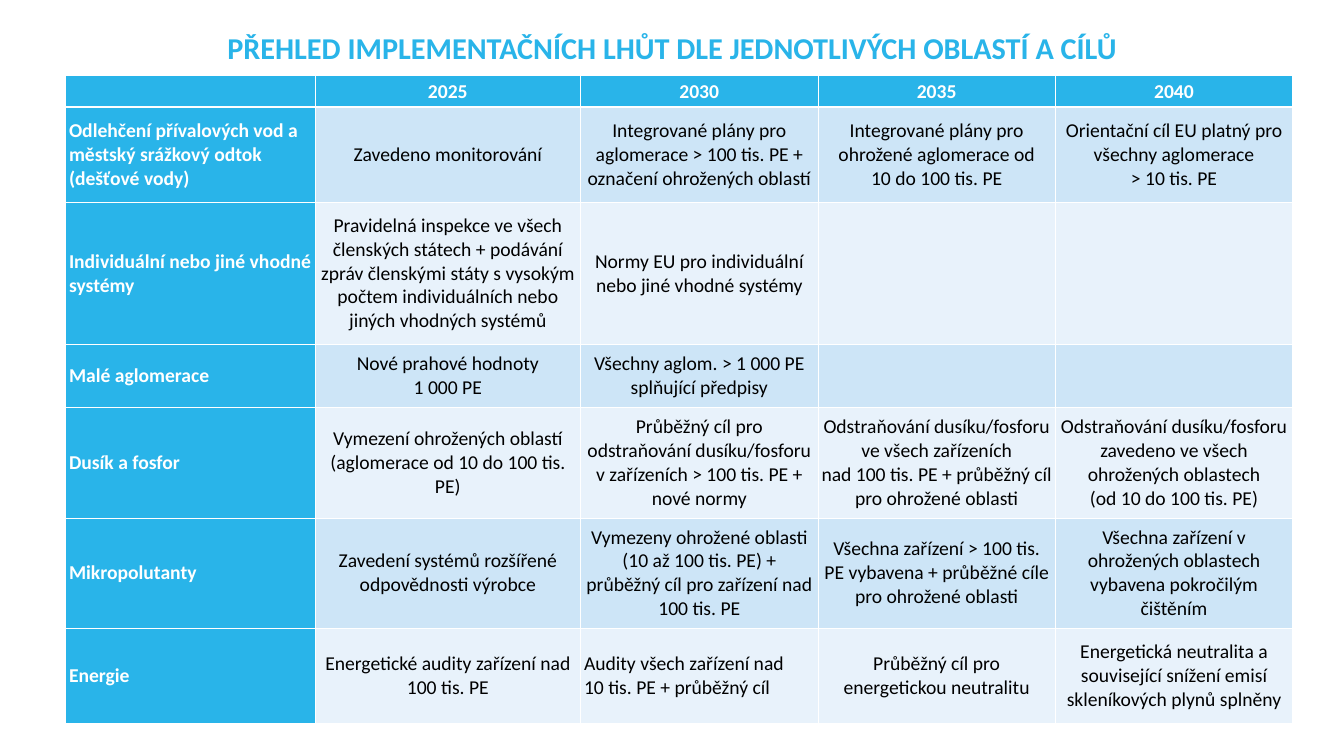
from dataclasses import dataclass

from lxml import etree
from pptx import Presentation
from pptx.dml.color import RGBColor
from pptx.enum.text import MSO_ANCHOR, PP_ALIGN
from pptx.oxml.ns import qn
from pptx.util import Pt

LEFT, CENTER = PP_ALIGN.LEFT, PP_ALIGN.CENTER
TOP, MIDDLE = MSO_ANCHOR.TOP, MSO_ANCHOR.MIDDLE


@dataclass(frozen=True)
class Theme:
    """Colours and type sizes of the slide."""
    font: str = "Calibri"
    accent: str = "29B4E9"
    white: str = "FFFFFF"
    black: str = "000000"
    bands: tuple = ("CDE5F7", "E8F2FB")
    title_size: float = 43.2
    table_size: float = 28


THEME = Theme()

TITLE = "PŘEHLED IMPLEMENTAČNÍCH LHŮT DLE JEDNOTLIVÝCH OBLASTÍ A CÍLŮ"
DEADLINES = [
    ["", "2025", "2030", "2035", "2040"],
    ["Odlehčení přívalových vod a městský srážkový odtok (dešťové vody)",
     "Zavedeno monitorování",
     "Integrované plány pro aglomerace > 100 tis. PE + označení ohrožených oblastí",
     "Integrované plány pro ohrožené aglomerace od\n10 do 100 tis. PE",
     "Orientační cíl EU platný pro všechny aglomerace\n> 10 tis. PE"],
    ["Individuální nebo jiné vhodné systémy",
     "Pravidelná inspekce ve všech členských státech + podávání zpráv členskými státy "
     "s vysokým počtem individuálních nebo jiných vhodných systémů",
     "Normy EU pro individuální nebo jiné vhodné systémy", "", ""],
    ["Malé aglomerace",
     "Nové prahové hodnoty\n1 000 PE",
     "Všechny aglom. > 1 000 PE splňující předpisy", "", ""],
    ["Dusík a fosfor",
     "Vymezení ohrožených oblastí (aglomerace od 10 do 100 tis. PE)",
     "Průběžný cíl pro odstraňování dusíku/fosforu v zařízeních > 100 tis. PE + nové normy",
     "Odstraňování dusíku/fosforu ve všech zařízeních\n"
     "nad 100 tis. PE + průběžný cíl pro ohrožené oblasti",
     "Odstraňování dusíku/fosforu zavedeno ve všech ohrožených oblastech\n"
     "(od 10 do 100 tis. PE)"],
    ["Mikropolutanty",
     "Zavedení systémů rozšířené odpovědnosti výrobce",
     "Vymezeny ohrožené oblasti (10 až 100 tis. PE) + průběžný cíl pro zařízení nad 100 tis. PE",
     "Všechna zařízení > 100 tis. PE vybavena + průběžné cíle pro ohrožené oblasti",
     "Všechna zařízení v ohrožených oblastech vybavena pokročilým čištěním"],
    ["Energie",
     "Energetické audity zařízení nad 100 tis. PE",
     "Audity všech zařízení nad\n10 tis. PE + průběžný cíl",
     "Průběžný cíl pro energetickou neutralitu",
     "Energetická neutralita a související snížení emisí skleníkových plynů splněny"],
]
LEFT_ALIGNED_GOAL = (6, 2)
COLUMN_WIDTHS = [356.4, 379.4, 339.1, 339.1, 339.1]
ROW_HEIGHTS = [44.6, 135.4, 203.8, 90, 157.7, 157.7, 135.4]


def write_text(paragraph, text, size, color, bold, align):
    """Fill a paragraph with one run per line of text."""
    paragraph.alignment = align
    for index, line in enumerate(text.split("\n")):
        if index:
            paragraph.add_line_break()
        run = paragraph.add_run()
        run.text = line
        run.font.name = THEME.font
        run.font.size = Pt(size)
        run.font.bold = bold
        run.font.color.rgb = RGBColor.from_string(color)


def add_title(slide):
    """Add the centred heading above the table."""
    frame = slide.shapes.add_textbox(Pt(85.7), Pt(47.5), Pt(1749.6), Pt(96.5)).text_frame
    frame.word_wrap = True
    frame.vertical_anchor = TOP
    frame.margin_left = frame.margin_right = frame.margin_top = frame.margin_bottom = 0
    heading = frame.paragraphs[0]
    heading.line_spacing = 0.9
    write_text(heading, TITLE, THEME.title_size, THEME.accent, True, CENTER)


def draw_borders(cell, bottom_width):
    """Give a cell white borders, 1 pt except for the bottom one."""
    properties = cell._tc.get_or_add_tcPr()
    for side, width in (("L", 1), ("R", 1), ("T", 1), ("B", bottom_width)):
        line = etree.SubElement(properties, qn(f"a:ln{side}"), w=str(Pt(width)))
        fill = etree.SubElement(line, qn("a:solidFill"))
        etree.SubElement(fill, qn("a:srgbClr"), val=THEME.white)


def style_cell(cell, row, column, text):
    """Set the borders, fill and text of one cell by its place in the table."""
    is_label = row == 0 or column == 0
    draw_borders(cell, 3 if row == 0 else 1)
    cell.fill.solid()
    band = THEME.bands[(row - 1) % 2]
    cell.fill.fore_color.rgb = RGBColor.from_string(THEME.accent if is_label else band)
    cell.vertical_anchor = MIDDLE
    cell.margin_left = cell.margin_right = Pt(5)
    cell.margin_top = cell.margin_bottom = Pt(5.8)
    if text:
        is_left = column == 0 or (row, column) == LEFT_ALIGNED_GOAL
        write_text(cell.text_frame.paragraphs[0], text, THEME.table_size,
                   THEME.white if is_label else THEME.black, is_label,
                   LEFT if is_left else CENTER)


def add_deadline_table(slide):
    """Add the table of areas against target years."""
    table = slide.shapes.add_table(
        len(ROW_HEIGHTS), len(COLUMN_WIDTHS), Pt(93.6), Pt(108),
        Pt(sum(COLUMN_WIDTHS)), Pt(sum(ROW_HEIGHTS))).table
    for column, width in zip(table.columns, COLUMN_WIDTHS):
        column.width = Pt(width)
    for row, height in zip(table.rows, ROW_HEIGHTS):
        row.height = Pt(height)
    for row, texts in enumerate(DEADLINES):
        for column, text in enumerate(texts):
            style_cell(table.cell(row, column), row, column, text)


def main():
    """Build and save the slide."""
    deck = Presentation()
    deck.slide_width, deck.slide_height = Pt(1920), Pt(1080)
    slide = deck.slides.add_slide(deck.slide_layouts[6])
    add_title(slide)
    add_deadline_table(slide)
    deck.save("out.pptx")


if __name__ == "__main__":
    main()
